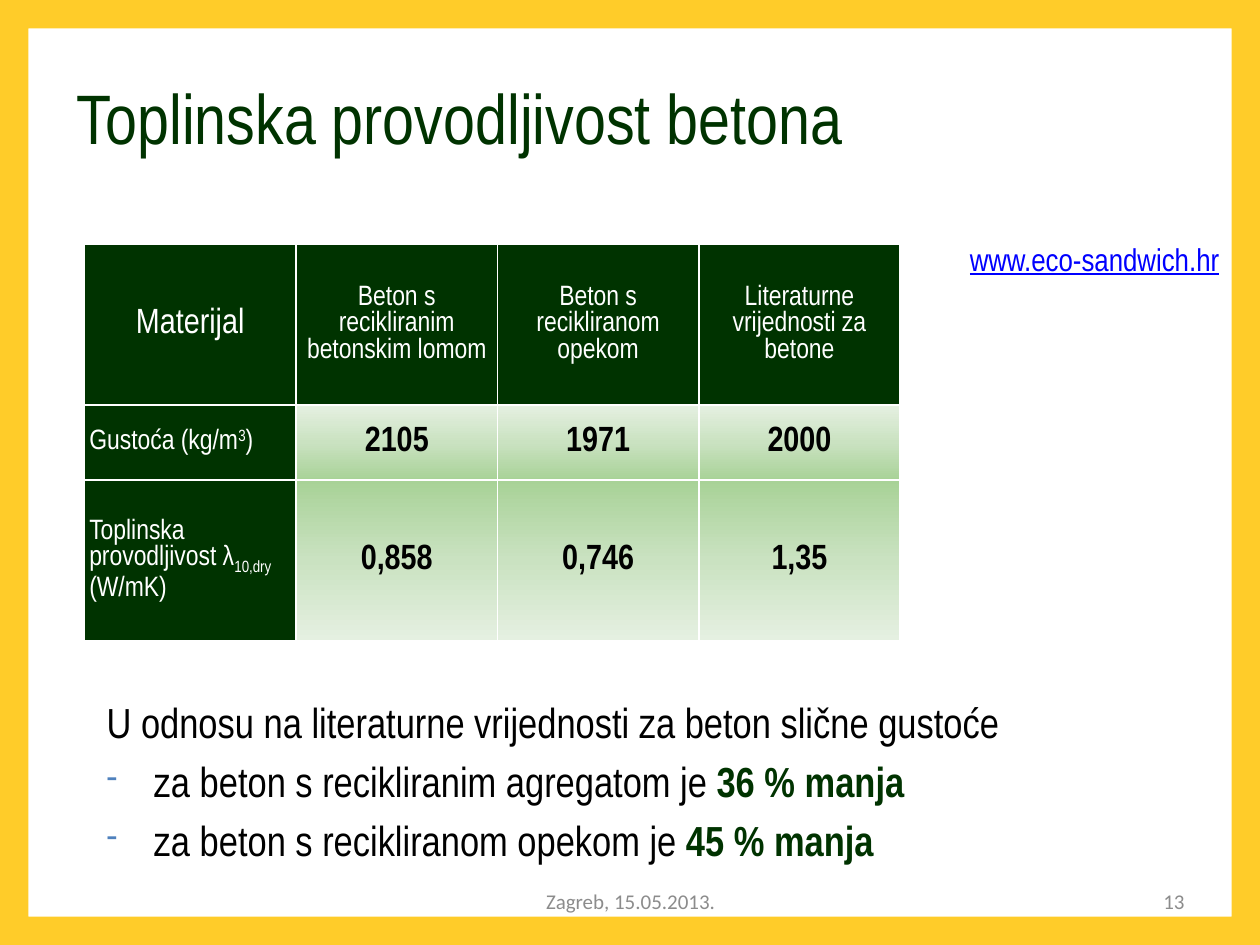
from lxml import etree
from pptx import Presentation
from pptx.dml.color import RGBColor
from pptx.enum.shapes import MSO_SHAPE
from pptx.enum.text import MSO_ANCHOR, PP_ALIGN
from pptx.oxml.ns import qn
from pptx.util import Cm, Pt

FRAME = MSO_SHAPE.FRAME
TOP, MIDDLE = MSO_ANCHOR.TOP, MSO_ANCHOR.MIDDLE
LEFT, CENTER, RIGHT, JUSTIFY = PP_ALIGN.LEFT, PP_ALIGN.CENTER, PP_ALIGN.RIGHT, PP_ALIGN.JUSTIFY
NARROW, FOOTER_FONT = "Arial Narrow", "Calibri"
COLORS = {
    "frame": "FFCC29", "green": "003300", "white": "FFFFFF", "black": "000000",
    "link": "0000FF", "footer": "8C8C8C", "bullet": "4F81BD",
}
GRADIENT = [(0, "A8D297"), (50, "CAE2C1"), (100, "E5F0E1")]


def rgb(name):
    return RGBColor.from_string(COLORS[name])


def add_xml(parent, tag, **attrs):
    return etree.SubElement(parent, qn(tag), attrs)


class SlideBuilder:
    def __init__(self, prs):
        self.s = prs.slides.add_slide(prs.slide_layouts[6])

    def style(self, p, size, color, font=NARROW, bold=False, align=LEFT):
        p.alignment = align
        p.font.size, p.font.name, p.font.bold = Pt(size), font, bold
        p.font.color.rgb = rgb(color)

    def frame(self, width, height):
        sp = self.s.shapes.add_shape(FRAME, 0, 0, width, height)
        sp.adjustments[0] = 0.03
        sp.shadow.inherit = False
        sp.fill.solid()
        sp.fill.fore_color.rgb = rgb("frame")
        sp.line.fill.background()

    def box(self, left, top, width, height, anchor=MIDDLE, wrap=True):
        tf = self.s.shapes.add_textbox(Cm(left), Cm(top), Cm(width), Cm(height)).text_frame
        tf.word_wrap, tf.vertical_anchor = wrap, anchor
        return tf

    def text(self, text, place, size, color, anchor=MIDDLE, wrap=True, **look):
        p = self.box(*place, anchor, wrap).paragraphs[0]
        p.text = text
        self.style(p, size, color, **look)
        return p

    def bullet(self, p):
        pPr = p._p.get_or_add_pPr()
        pPr.set("marL", str(Cm(1.15)))
        pPr.set("indent", str(-Cm(0.95)))
        add_xml(add_xml(pPr, "a:buClr"), "a:srgbClr", val=COLORS["bullet"])
        add_xml(pPr, "a:buSzPct", val="76000")
        add_xml(pPr, "a:buChar", char="-")

    def conclusions(self, intro, items, place):
        """An intro line, then dashed items of plain text with a bold green ending."""
        tf = self.box(*place, TOP)
        p = tf.paragraphs[0]
        p.text = intro
        p._p.get_or_add_pPr().set("marL", str(Cm(0.2)))
        self.style(p, 24, "black")
        for plain, strong in items:
            p = tf.add_paragraph()
            self.bullet(p)
            p.space_before = Pt(5)
            self.style(p, 24, "black")
            p.add_run().text = plain
            r = p.add_run()
            r.text = strong
            r.font.bold, r.font.color.rgb = True, rgb("green")

    def cell(self, cell, parts, size, color, bold, align):
        """Parts are (text, baseline shift in percent) pairs."""
        cell.vertical_anchor = MIDDLE
        cell.margin_left = cell.margin_right = Cm(0.1)
        cell.margin_top = cell.margin_bottom = 0
        p = cell.text_frame.paragraphs[0]
        self.style(p, size, color, bold=bold, align=align)
        for text, shift in parts:
            r = p.add_run()
            r.text = text
            if shift:
                r.font._element.set("baseline", str(shift * 1000))

    def fill_cell(self, cell, angle=None):
        """Solid green, or the light gradient when an angle is given."""
        tcPr = cell._tc.get_or_add_tcPr()
        for side in ("L", "R", "T", "B"):
            ln = add_xml(tcPr, f"a:ln{side}", w=str(Pt(1)))
            add_xml(add_xml(ln, "a:solidFill"), "a:srgbClr", val=COLORS["white"])
        if angle is None:
            cell.fill.solid()
            cell.fill.fore_color.rgb = rgb("green")
            return
        grad = add_xml(tcPr, "a:gradFill", rotWithShape="1")
        stops = add_xml(grad, "a:gsLst")
        for pos, color in GRADIENT:
            add_xml(add_xml(stops, "a:gs", pos=str(pos * 1000)), "a:srgbClr", val=color)
        add_xml(grad, "a:lin", ang=str(angle * 60000), scaled="0")

    def table(self, header, rows, left, top, widths, heights):
        """Each row is (label parts, label alignment, gradient angle, values)."""
        table = self.s.shapes.add_table(len(heights), len(widths), Cm(left), Cm(top),
                                        Cm(sum(widths)), Cm(sum(heights))).table
        for col, width in zip(table.columns, widths):
            col.width = Cm(width)
        for row, height in zip(table.rows, heights):
            row.height = Cm(height)
        for j, text in enumerate(header):
            cell = table.cell(0, j)
            self.cell(cell, [(text, 0)], 16 if j else 20, "white", False, CENTER)
            self.fill_cell(cell)
        for i, (label, align, angle, values) in enumerate(rows, 1):
            self.cell(table.cell(i, 0), label, 16, "white", False, align)
            self.fill_cell(table.cell(i, 0))
            for j, value in enumerate(values, 1):
                self.cell(table.cell(i, j), [(value, 0)], 20, "black", True, CENTER)
                self.fill_cell(table.cell(i, j), angle)


def main():
    prs = Presentation()
    prs.slide_width, prs.slide_height = Cm(25.4), Cm(19.05)
    b = SlideBuilder(prs)
    b.frame(prs.slide_width, prs.slide_height)
    link = b.text("www.eco-sandwich.hr", (19.3, 4.72, 5.74, 1.02), 18, "link",
                  anchor=TOP, wrap=False)
    link.font.underline = True
    b.text("Toplinska provodljivost betona", (1.3, 0.76, 16.03, 3.18), 40, "green")
    b.table(
        ["Materijal", "Beton s recikliranim betonskim lomom",
         "Beton s recikliranom opekom", "Literaturne vrijednosti za betone"],
        [([("Gustoća (kg/m", 0), ("3", 30), (")", 0)], JUSTIFY, 270,
          ["2105", "1971", "2000"]),
         ([("Toplinska provodljivost λ", 0), ("10,dry ", -25), ("(W/mK)", 0)], LEFT, 90,
          ["0,858", "0,746", "1,35"])],
        1.7, 4.93, [4.27, 4.06, 4.06, 4.06], [3.23, 1.52, 3.23])
    b.conclusions(
        "U odnosu na literaturne vrijednosti za beton slične gustoće",
        [("za beton s recikliranim agregatom je ", "36 % manja"),
         ("za beton s recikliranom opekom je ", "45 % manja")],
        (1.7, 13.92, 19.81, 3.81))
    b.text("Zagreb, 15.05.2013.", (8.69, 17.65, 8.05, 1.02), 12, "footer",
           font=FOOTER_FONT, align=CENTER)
    b.text("13", (18.21, 17.65, 5.92, 1.02), 12, "footer", font=FOOTER_FONT, align=RIGHT)
    prs.save("out.pptx")


if __name__ == "__main__":
    main()
